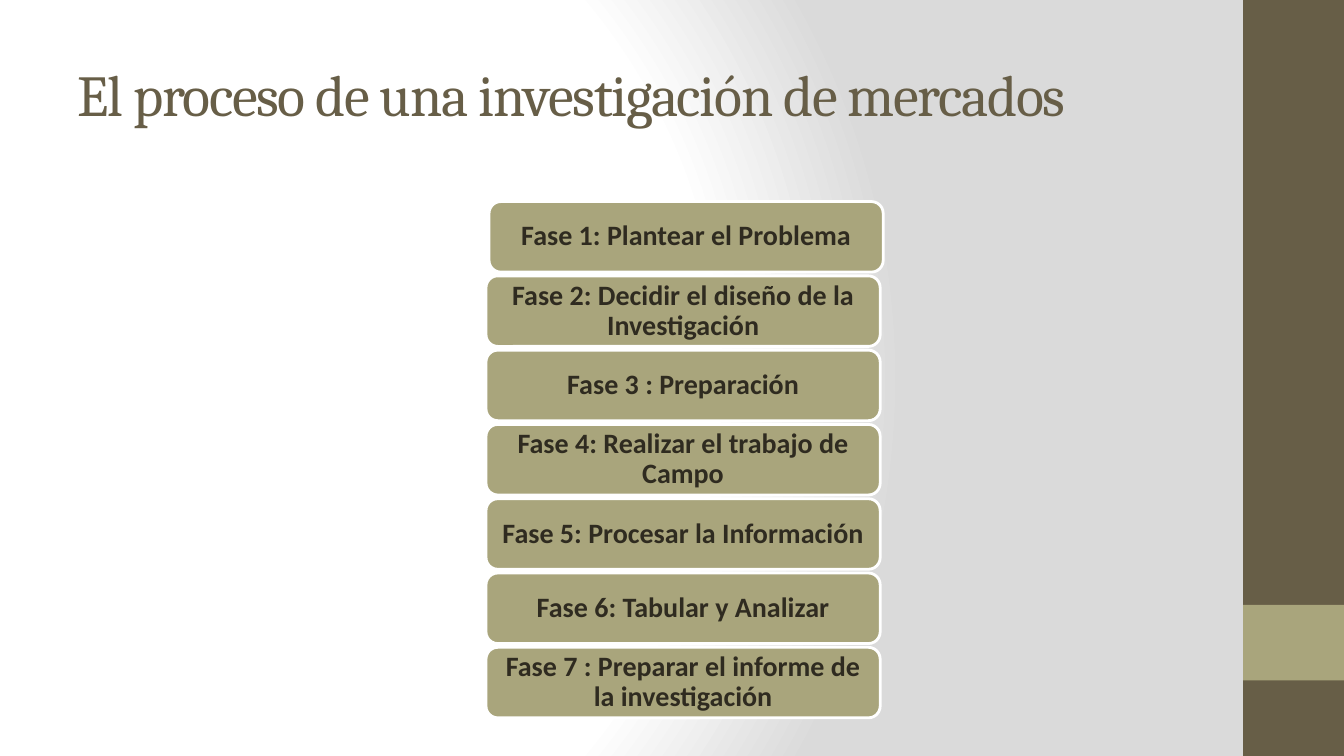
from pptx import Presentation
from pptx.dml.color import RGBColor
from pptx.enum.shapes import MSO_SHAPE
from pptx.enum.text import MSO_ANCHOR, MSO_AUTO_SIZE, PP_ALIGN
from pptx.oxml import parse_xml
from pptx.oxml.ns import nsdecls
from pptx.util import Inches, Pt

BROWN = RGBColor(0x67, 0x5E, 0x47)
OLIVE = RGBColor(0xA9, 0xA5, 0x7C)
DARK = RGBColor(0x2F, 0x2B, 0x20)
WHITE = RGBColor(0xFF, 0xFF, 0xFF)
GREY = RGBColor(0xDA, 0xDA, 0xDA)

TITLE = "El proceso de una investigación de mercados"
PHASES = [
    "Fase 1: Plantear el Problema",
    "Fase 2: Decidir el diseño de la Investigación",
    "Fase 3 : Preparación",
    "Fase 4: Realizar el trabajo de Campo",
    "Fase 5: Procesar la Información",
    "Fase 6: Tabular y Analizar",
    "Fase 7 : Preparar el informe de la investigación",
]
TOP, PITCH = 2, 0.737


def place(shape, left, top, width, height):
    shape.left, shape.top = Inches(left), Inches(top)
    shape.width, shape.height = Inches(width), Inches(height)


def set_back(slide):
    fill = slide.background.fill
    fill.solid()
    # Radial gradient, which python-pptx has no method for
    stops = "".join(
        f'<a:gs pos="{pos * 1000}"><a:srgbClr val="{color}"/></a:gs>'
        for pos, color in [(0, WHITE), (75, WHITE), (100, GREY)])
    grad = parse_xml(
        f'<a:gradFill {nsdecls("a")} rotWithShape="1"><a:gsLst>{stops}</a:gsLst>'
        '<a:path path="circle"><a:fillToRect l="20000" t="50000" '
        'r="100000" b="50000"/></a:path></a:gradFill>')
    props = slide.element.cSld.bg.bgPr
    props.replace(props[0], grad)


def add_box(slide, kind, color, *area):
    box = slide.shapes.add_shape(kind, *map(Inches, area))
    box.shadow.inherit = False
    box.fill.solid()
    box.fill.fore_color.rgb = color
    box.line.fill.background()
    return box


def style_run(run, name, size, color):
    run.font.name = name
    run.font.size = Pt(size)
    run.font.color.rgb = color


def set_title(slide):
    title = slide.shapes.title
    place(title, 0.67, 0.3, 11.11, 1.25)
    frame = title.text_frame
    frame.text = TITLE
    frame.auto_size = MSO_AUTO_SIZE.NONE
    frame.vertical_anchor = MSO_ANCHOR.MIDDLE
    line = frame.paragraphs[0]
    line.alignment = PP_ALIGN.LEFT
    run = line.runs[0]
    style_run(run, "Cambria", 41.4, BROWN)
    run.font._element.set("spc", "-100")


def add_phase(slide, text, left, top):
    box = add_box(slide, MSO_SHAPE.ROUNDED_RECTANGLE, OLIVE,
                  left, top, 3.91, 0.7)
    box.line.color.rgb = WHITE
    box.line.width = Pt(2)
    frame = box.text_frame
    frame.text = text
    frame.word_wrap = True
    frame.vertical_anchor = MSO_ANCHOR.MIDDLE
    frame.margin_left = frame.margin_right = Inches(0.05)
    frame.margin_top = frame.margin_bottom = Inches(0.01)
    line = frame.paragraphs[0]
    line.alignment = PP_ALIGN.CENTER
    line.line_spacing = 0.9
    style_run(line.runs[0], "Calibri", 20, DARK)
    line.runs[0].font.bold = True


def main():
    deck = Presentation()
    deck.slide_width, deck.slide_height = Inches(13.33), Inches(7.5)
    slide = deck.slides.add_slide(deck.slide_layouts[5])
    set_back(slide)

    # Side band
    add_box(slide, MSO_SHAPE.RECTANGLE, BROWN, 12.33, 0, 1, 7.5)
    add_box(slide, MSO_SHAPE.RECTANGLE, OLIVE, 12.33, 6, 1, 0.75)

    set_title(slide)

    # Stack of phases, the first set slightly to the right
    for row, text in enumerate(PHASES):
        left = 4.82 if row else 4.85
        add_phase(slide, text, left, TOP + row * PITCH)

    deck.save("out.pptx")


if __name__ == "__main__":
    main()
